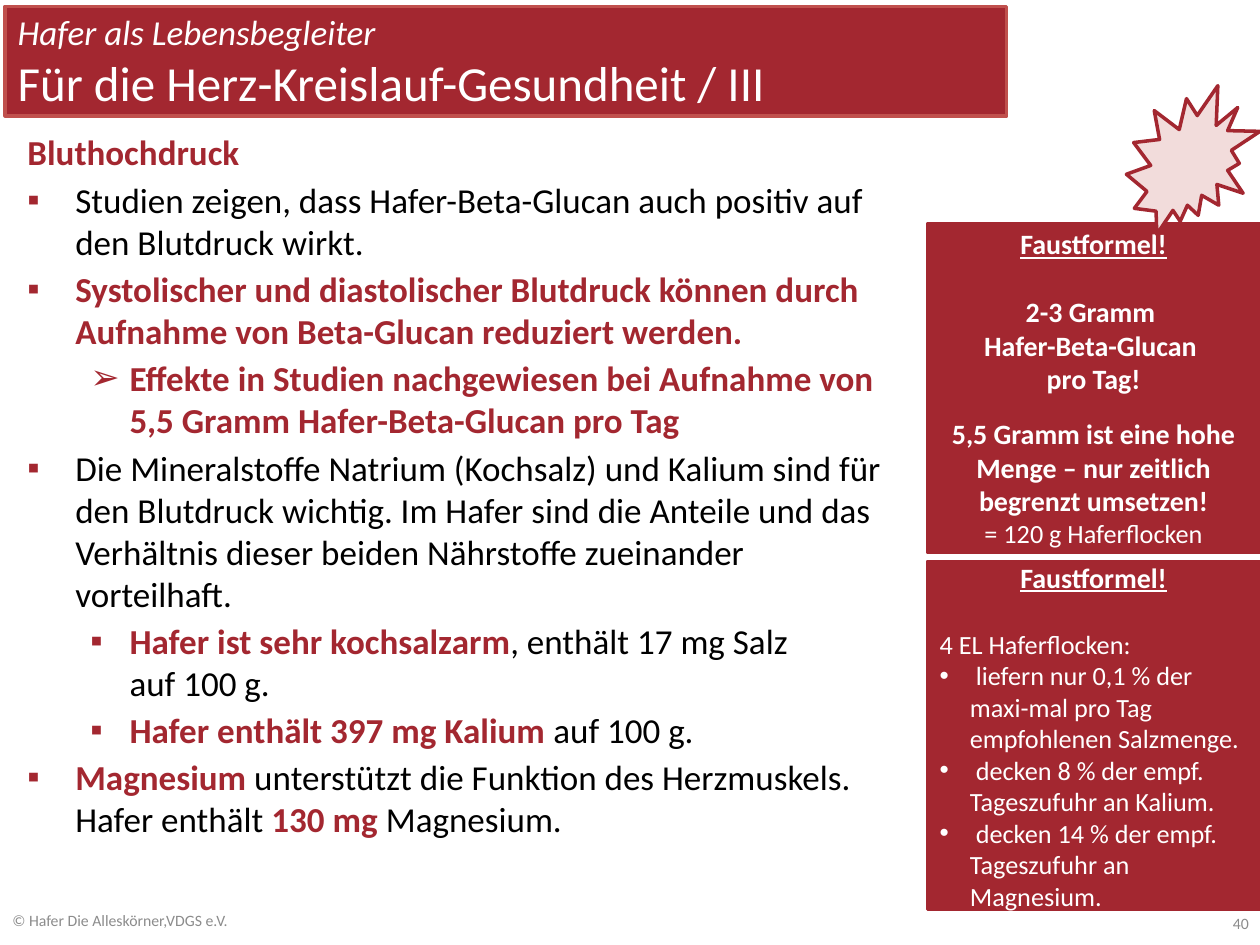
import pptx
import pptx.dml.color
import pptx.enum.shapes
import pptx.enum.text
import pptx.oxml
import pptx.util
from lxml import etree

Inches, Pt = pptx.util.Inches, pptx.util.Pt
ALIGN = pptx.enum.text.PP_ALIGN
ANCHOR = pptx.enum.text.MSO_ANCHOR
SHAPE = pptx.enum.shapes.MSO_SHAPE
COLORS = {"red": "A32730", "edge": "C0504D", "pink": "F2DCDB",
          "white": "FFFFFF", "black": "000000", "gray": "8C8C8C"}


def color(name):
    return pptx.dml.color.RGBColor.from_string(COLORS[name])


def write(para, text, size=20, ink="black", bold=False, italic=False, line=False):
    """Add text to a paragraph; each newline becomes a line break."""
    for i, part in enumerate(text.split("\n")):
        if i:
            para.add_line_break()
        run = para.add_run()
        run.text = part
        font = run.font
        font.name, font.size = "Calibri", Pt(size)
        font.bold, font.italic, font.underline = bold, italic, line
        font.color.rgb = color(ink)


def bullet(para, mark, left, hang, ink):
    """Give a paragraph a bullet sign with a hanging indent."""
    props = para._p.get_or_add_pPr()
    props.set("marL", str(Inches(left)))
    props.set("indent", str(-Inches(hang)))
    tint = etree.SubElement(props, pptx.oxml.ns.qn("a:buClr"))
    etree.SubElement(tint, pptx.oxml.ns.qn("a:srgbClr"), val=COLORS[ink])
    etree.SubElement(props, pptx.oxml.ns.qn("a:buFont"), typeface="Arial")
    etree.SubElement(props, pptx.oxml.ns.qn("a:buChar"), char=mark)


class Deck:
    def __init__(self):
        self.prs = pptx.Presentation()
        self.prs.slide_width, self.prs.slide_height = Inches(10), Inches(7.5)
        self.slide = self.prs.slides.add_slide(self.prs.slide_layouts[5])

    def paint(self, shape, fill, edge):
        shape.fill.solid()
        shape.fill.fore_color.rgb = color(fill)
        shape.line.color.rgb = color(edge)
        shape.line.width = Pt(2)

    def frame(self, shape, anchor=ANCHOR.MIDDLE):
        frame = shape.text_frame
        frame.word_wrap = True
        frame.auto_size = pptx.enum.text.MSO_AUTO_SIZE.NONE
        frame.vertical_anchor = anchor
        return frame

    def para(self, frame, align=ALIGN.LEFT, before=0):
        first = frame.paragraphs[0]
        para = frame.add_paragraph() if first.runs else first
        para.alignment = align
        para.space_before = Pt(before)
        return para

    def title(self, place, lines):
        shape = self.slide.shapes.title
        shape.left, shape.top, shape.width, shape.height = map(Inches, place)
        self.paint(shape, "red", "edge")
        frame = self.frame(shape)
        for text, style in lines:
            write(self.para(frame), text, ink="white", **style)

    def text(self, place, anchor=ANCHOR.MIDDLE):
        return self.frame(self.slide.shapes.add_textbox(*map(Inches, place)), anchor)

    def small(self, place, text, align):
        write(self.para(self.text(place), align), text, size=9, ink="gray")

    def shape(self, kind, place, fill):
        shape = self.slide.shapes.add_shape(kind, *map(Inches, place))
        shape.shadow.inherit = False
        self.paint(shape, fill, "red")
        return shape

    def panel(self, top, height):
        """Red side box with its underlined heading."""
        frame = self.frame(self.shape(SHAPE.RECTANGLE, (7.36, top, 2.64, height), "red"))
        write(self.para(frame, ALIGN.CENTER), "Faustformel!",
              size=16, ink="white", bold=True, line=True)
        return frame


# Bullet sign, left indent and hanging indent per kind of point
POINT = ("▪", 0.38, 0.38)
ARROW = ("➢", 0.81, 0.31)
SUB = ("▪", 0.81, 0.31)

# Each point: kind, then runs of (text, strong)
POINTS = [
    (None, [("Bluthochdruck", True)]),
    (POINT, [("Studien zeigen, dass Hafer-Beta-Glucan auch positiv auf den Blutdruck wirkt.", False)]),
    (POINT, [("Systolischer und diastolischer Blutdruck können durch Aufnahme von "
              "Beta-Glucan reduziert werden.", True)]),
    (ARROW, [("Effekte in Studien nachgewiesen bei Aufnahme von 5,5 Gramm "
              "Hafer-Beta-Glucan pro Tag", True)]),
    (POINT, [("Die Mineralstoffe Natrium (Kochsalz) und Kalium sind für den Blutdruck wichtig. "
              "Im Hafer sind die Anteile und das Verhältnis dieser beiden Nährstoffe "
              "zueinander vorteilhaft.", False)]),
    (SUB, [("Hafer ist sehr kochsalzarm", True), (", enthält 17 mg Salz \nauf 100 g.", False)]),
    (SUB, [("Hafer enthält 397 mg Kalium ", True), ("auf 100 g.", False)]),
    (POINT, [("Magnesium", True), (" unterstützt die Funktion des Herzmuskels. Hafer enthält ", False),
             ("130 mg ", True), ("Magnesium.", False)]),
]

FACTS = [" liefern nur 0,1 % der maxi-mal pro Tag empfohlenen Salzmenge.",
         " decken 8 % der empf. Tageszufuhr an Kalium.",
         " decken 14 % der empf. Tageszufuhr an Magnesium."]


def main():
    deck = Deck()

    # Title banner
    deck.title((0.04, 0.05, 7.95, 0.87), [
        ("Hafer als Lebensbegleiter", {"size": 20, "italic": True}),
        ("Für die Herz-Kreislauf-Gesundheit / III", {"size": 28})])

    # Main points
    body = deck.text((0.12, 0.99, 7.16, 6.3), ANCHOR.TOP)
    for kind, runs in POINTS:
        para = deck.para(body, before=3 if kind else 0)
        if kind:
            bullet(para, *kind, "red")
        for text, strong in runs:
            write(para, text, ink="red" if strong else "black", bold=strong)

    # Lower box: salt and minerals
    box = deck.panel(4.46, 2.76)
    write(deck.para(box, before=19.5), "4 EL Haferflocken:", size=15, ink="white")
    for fact in FACTS:
        para = deck.para(box)
        bullet(para, "•", 0.24, 0.24, "white")
        write(para, fact, size=15, ink="white")

    # Upper box: daily dose
    box = deck.panel(1.78, 2.6)
    for text, size, bold, gap in [
            ("2-3 Gramm \nHafer-Beta-Glucan \npro Tag!", 16, True, 19.5),
            ("5,5 Gramm ist eine hohe Menge – nur zeitlich begrenzt umsetzen!", 16, True, 12.2),
            ("= 120 g Haferflocken", 15, False, 0)]:
        write(deck.para(box, ALIGN.CENTER, gap), text, size=size, ink="white", bold=bold)

    # Burst
    deck.shape(SHAPE.EXPLOSION2, (8.94, 0.68, 1.06, 1.18), "pink")

    # Footer
    deck.small((0, 7.1, 3.17, 0.4), "© Hafer Die Alleskörner,VDGS e.V.", ALIGN.LEFT)
    deck.small((7.68, 7.13, 2.33, 0.4), "40", ALIGN.RIGHT)

    deck.prs.save("out.pptx")


if __name__ == "__main__":
    main()
